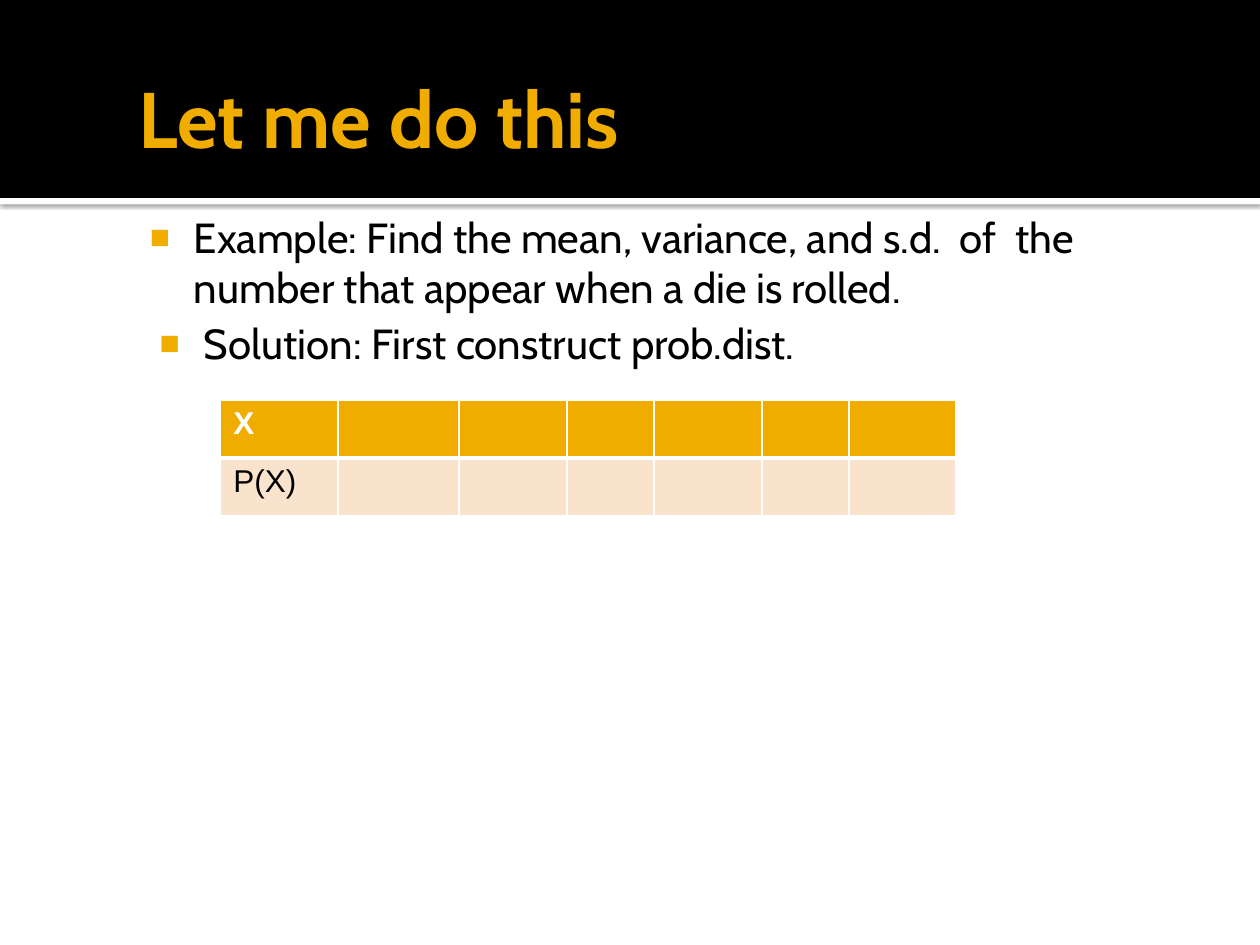
from dataclasses import dataclass

from lxml import etree
from pptx import Presentation
from pptx.dml.color import RGBColor
from pptx.enum.shapes import MSO_SHAPE
from pptx.enum.text import MSO_ANCHOR, MSO_AUTO_SIZE, PP_ALIGN
from pptx.oxml.ns import qn
from pptx.util import Cm, Pt

RECTANGLE = MSO_SHAPE.RECTANGLE
TOP, MIDDLE = MSO_ANCHOR.TOP, MSO_ANCHOR.MIDDLE
LEFT = PP_ALIGN.LEFT
NO_AUTOFIT = MSO_AUTO_SIZE.NONE

BLACK = RGBColor(0x00, 0x00, 0x00)
WHITE = RGBColor(0xFF, 0xFF, 0xFF)
AMBER = RGBColor(0xF0, 0xAD, 0x00)
PEACH = RGBColor(0xF9, 0xE3, 0xCC)

THIN, THICK = Pt(1), Pt(3)
COLUMN_WIDTHS = (2.36, 2.44, 2.18, 1.75, 2.18, 1.75, 2.16)
ROW_HEIGHT = 1.17


@dataclass(frozen=True)
class Box:
    left: float
    top: float
    width: float
    height: float

    def lengths(self):
        return Cm(self.left), Cm(self.top), Cm(self.width), Cm(self.height)


@dataclass(frozen=True)
class Band:
    box: Box
    color: RGBColor
    shadow: bool


@dataclass(frozen=True)
class Bullet:
    box: Box
    text: str


@dataclass(frozen=True)
class TableRow:
    label: str
    fill: RGBColor
    color: RGBColor
    bold: bool
    top_border: int
    bottom_border: int


BANDS = (
    Band(Box(0, 3.99, 25.4, 0.13), WHITE, True),
    Band(Box(0, 0, 25.4, 3.99), BLACK, False),
)
BULLETS = (
    Bullet(Box(2.54, 4.01, 22.02, 13.0),
           "Example: Find the mean, variance, and s.d.  of  the number that appear when a die is rolled."),
    Bullet(Box(2.74, 6.15, 21.39, 10.9), "Solution: First construct prob.dist."),
)
ROWS = (
    TableRow("X", AMBER, WHITE, True, THIN, THICK),
    TableRow("P(X)", PEACH, BLACK, False, THICK, THIN),
)


def add_color(parent, color: RGBColor):
    return etree.SubElement(parent, qn("a:srgbClr"), val=str(color))


def write_text(frame, text: str, *, size: float, color: RGBColor, font: str, bold: bool = False):
    paragraph = frame.paragraphs[0]
    paragraph.alignment = LEFT
    paragraph.line_spacing = 1.0
    paragraph.space_before = Pt(0)
    run = paragraph.add_run()
    run.text = text
    run.font.name = font
    run.font.size = Pt(size)
    run.font.bold = bold
    run.font.color.rgb = color
    return paragraph


def place(shape, box: Box, anchor, insets: tuple):
    shape.left, shape.top, shape.width, shape.height = box.lengths()
    frame = shape.text_frame
    frame.word_wrap = True
    frame.auto_size = NO_AUTOFIT
    frame.vertical_anchor = anchor
    frame.margin_left, frame.margin_top, frame.margin_right, frame.margin_bottom = map(Cm, insets)
    return frame


def add_band(slide, band: Band, position: int) -> None:
    shape = slide.shapes.add_shape(RECTANGLE, *band.box.lengths())
    shape.shadow.inherit = False
    shape.fill.solid()
    shape.fill.fore_color.rgb = band.color
    shape.line.fill.background()
    if band.shadow:
        effects = shape.element.spPr.find(qn("a:effectLst"))
        shadow = etree.SubElement(effects, qn("a:outerShdw"), blurRad=str(Pt(2.5)),
                                  dist=str(Pt(0.8)), dir="5400000", rotWithShape="0")
        etree.SubElement(add_color(shadow, BLACK), qn("a:alpha"), val="60000")
    # Keep the bands behind the placeholders
    slide.shapes.element.insert(position, shape.element)


def add_bullet(placeholder, bullet: Bullet) -> None:
    frame = place(placeholder, bullet.box, TOP, (0.15, 0.25, 0.25, 0.13))
    paragraph = write_text(frame, bullet.text, size=24, color=BLACK, font="Cabin")
    properties = paragraph._p.get_or_add_pPr()
    properties.set("marL", str(Cm(1.22)))
    properties.set("indent", str(Cm(-0.89)))
    add_color(etree.SubElement(properties, qn("a:buClr")), AMBER)
    etree.SubElement(properties, qn("a:buSzPct"), val="80000")
    etree.SubElement(properties, qn("a:buFont"), typeface="Arial")
    etree.SubElement(properties, qn("a:buChar"), char="■")


def set_borders(cell, top: int, bottom: int) -> None:
    properties = cell._tc.get_or_add_tcPr()
    widths = {"a:lnL": THIN, "a:lnR": THIN, "a:lnT": top, "a:lnB": bottom}
    for index, (tag, width) in enumerate(widths.items()):
        line = etree.Element(qn(tag), w=str(width))
        add_color(etree.SubElement(line, qn("a:solidFill")), WHITE)
        properties.insert(index, line)


def add_distribution_table(slide) -> None:
    box = Box(4.45, 8.06, sum(COLUMN_WIDTHS), ROW_HEIGHT * len(ROWS))
    table = slide.shapes.add_table(len(ROWS), len(COLUMN_WIDTHS), *box.lengths()).table
    for column, width in zip(table.columns, COLUMN_WIDTHS):
        column.width = Cm(width)
    for table_row, row in zip(table.rows, ROWS):
        table_row.height = Cm(ROW_HEIGHT)
        for cell in table_row.cells:
            cell.fill.solid()
            cell.fill.fore_color.rgb = row.fill
            set_borders(cell, row.top_border, row.bottom_border)
        write_text(table_row.cells[0].text_frame, row.label, size=18,
                   color=row.color, font="Arial", bold=row.bold)


def main() -> None:
    presentation = Presentation()
    presentation.slide_width, presentation.slide_height = Cm(25.4), Cm(19.05)
    layout = presentation.slide_layouts.get_by_name("Two Content")
    slide = presentation.slides.add_slide(layout)

    # Header bands
    for position, band in enumerate(BANDS, start=2):
        add_band(slide, band, position)

    # Title and bullets
    title = place(slide.shapes.title, Box(2.54, 0.76, 21.59, 3.18), MIDDLE, (0.25, 0.13, 0.13, 0.13))
    write_text(title, "Let me do this", size=45, color=AMBER, font="Cabin", bold=True)
    for index, bullet in enumerate(BULLETS, start=1):
        add_bullet(slide.placeholders[index], bullet)

    # Probability distribution
    add_distribution_table(slide)
    presentation.save("out.pptx")


if __name__ == "__main__":
    main()
